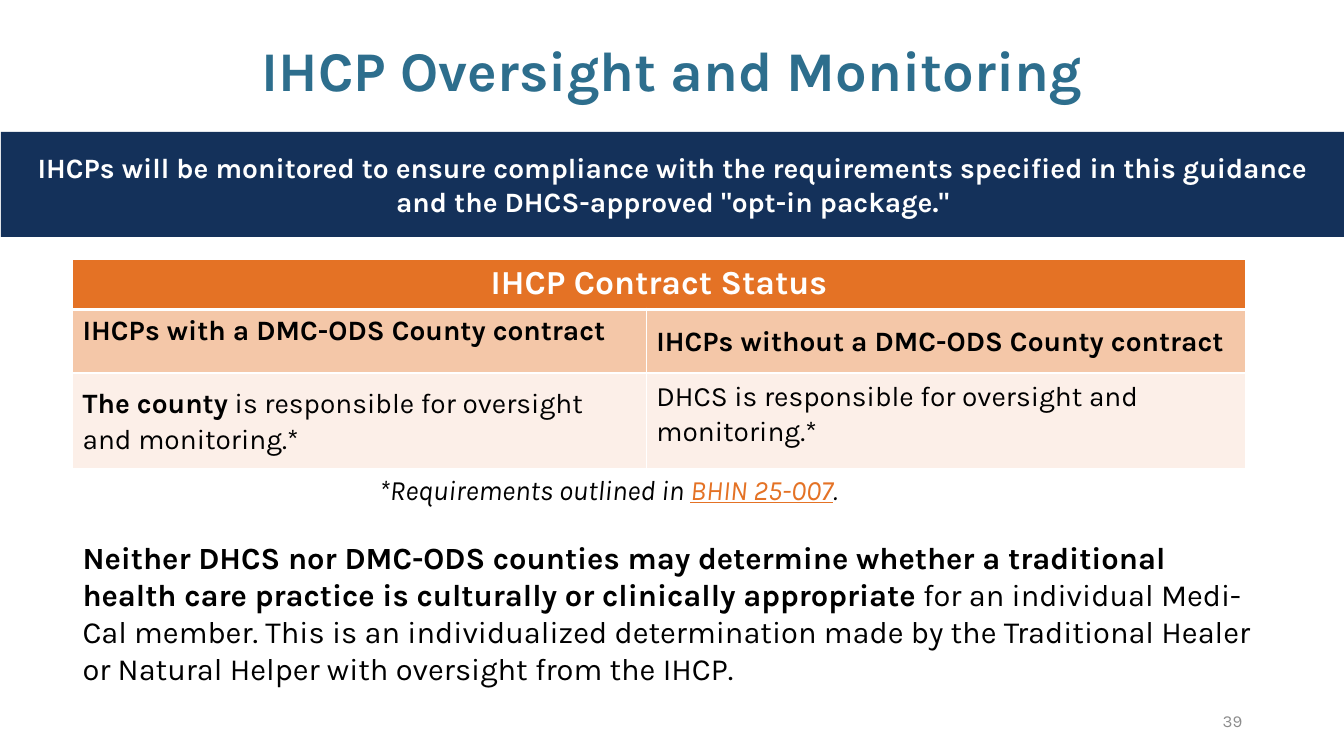
"""Build the slide on IHCP oversight and monitoring."""
import lxml.etree
import pptx
import pptx.dml.color
import pptx.enum.shapes
import pptx.enum.text
import pptx.oxml.ns
import pptx.util

Inches = pptx.util.Inches
Pt = pptx.util.Pt
ALIGN = pptx.enum.text.PP_ALIGN
ANCHOR = pptx.enum.text.MSO_ANCHOR
qn = pptx.oxml.ns.qn


def color(code):
    return pptx.dml.color.RGBColor.from_string(code)


def write(frame, runs, size, code, bold=None, align=ALIGN.LEFT, anchor=ANCHOR.TOP):
    frame.word_wrap = True
    frame.vertical_anchor = anchor
    para = frame.paragraphs[0]
    para.alignment = align
    para.font.name = "Karla"
    para.font.size = Pt(size)
    para.font.color.rgb = color(code)
    para.font.bold = bold
    for text, heavy in runs:
        run = para.add_run()
        run.text = text
        if heavy is not None:
            run.font.bold = heavy
    return para


deck = pptx.Presentation()
deck.slide_width = Inches(13.33)
deck.slide_height = Inches(7.5)
slide = deck.slides.add_slide(deck.slide_layouts[6])
shapes = slide.shapes

title = shapes.add_textbox(Inches(0), Inches(0), Inches(13.33), Inches(1.45))
para = write(title.text_frame, [("IHCP Oversight and Monitoring", None)],
             40, "2D6E8D", True, ALIGN.CENTER, ANCHOR.MIDDLE)
para.line_spacing = 0.9

number = shapes.add_textbox(Inches(9.42), Inches(6.95), Inches(3), Inches(0.4))
write(number.text_frame, [("39", None)], 12, "8C8C8C",
      align=ALIGN.RIGHT, anchor=ANCHOR.MIDDLE)

body = shapes.add_textbox(Inches(0.72), Inches(5.3), Inches(11.85), Inches(1.84))
para = write(body.text_frame, [
    ("Neither DHCS nor DMC-ODS counties may determine whether a traditional "
     "health care practice is culturally or clinically appropriate", True),
    (" for an individual Medi-Cal member. This is an individualized determination "
     "made by the Traditional Healer or Natural Helper with oversight from the IHCP.", False),
], 22, "000000")
para.space_after = Pt(10)

table = shapes.add_table(3, 2, Inches(0.72), Inches(2.57), Inches(11.63), Inches(2.06)).table
table.horz_banding = False
for col, width in zip(table.columns, (5.69, 5.94)):
    col.width = Inches(width)
for row, height in zip(table.rows, (0.48, 0.63, 0.95)):
    row.height = Inches(height)
table.cell(0, 0).merge(table.cell(0, 1))

write(table.cell(0, 0).text_frame, [("IHCP Contract Status", None)],
      24, "FFFFFF", True, ALIGN.CENTER)
entries = [
    (1, 0, [("IHCPs with a DMC-ODS County contract", True)], ANCHOR.TOP, 1, 0),
    (1, 1, [("IHCPs without a DMC-ODS County contract", True)], ANCHOR.MIDDLE, 1.07, 8),
    (2, 0, [("The county", True), (" is responsible for oversight and monitoring.*", False)],
     ANCHOR.MIDDLE, 1.08, 6),
    (2, 1, [("DHCS is responsible for oversight and monitoring.*", False)], ANCHOR.TOP, 1.07, 8),
]
for row, col, runs, anchor, lines, after in entries:
    cell = table.cell(row, col)
    para = write(cell.text_frame, runs, 20, "000000")
    cell.vertical_anchor = anchor
    para.line_spacing = lines
    para.space_after = Pt(after)

for row, fill in enumerate(("E47225", "F4C7A8", "FCEFE8")):
    for col in range(2):
        cell = table.cell(row, col)
        cell.fill.solid()
        cell.fill.fore_color.rgb = color(fill)
        props = cell._tc.get_or_add_tcPr()
        for spot, side in enumerate(("lnL", "lnR", "lnT", "lnB")):
            thick = (row, side) in ((0, "lnB"), (1, "lnT"))
            line = lxml.etree.Element(qn("a:" + side), w=str(Pt(3 if thick else 1)))
            paint = lxml.etree.SubElement(line, qn("a:solidFill"))
            lxml.etree.SubElement(paint, qn("a:srgbClr"), val="FFFFFF")
            props.insert(spot, line)

banner = shapes.add_shape(pptx.enum.shapes.MSO_SHAPE.RECTANGLE,
                          Inches(0.01), Inches(1.31), Inches(13.33), Inches(1.04))
banner.shadow.inherit = False
banner.fill.solid()
banner.fill.fore_color.rgb = color("14315A")
banner.line.fill.background()
write(banner.text_frame, [
    ("IHCPs will be monitored to ensure compliance with the requirements specified "
     'in this guidance and the DHCS-approved "opt-in package."', None),
], 20, "FFFFFF", True, ALIGN.CENTER, ANCHOR.MIDDLE)

note = shapes.add_textbox(Inches(3.34), Inches(4.64), Inches(5.39), Inches(0.44))
para = write(note.text_frame, [
    ("*Requirements outlined in ", None), ("BHIN 25-007", None), (".", None),
], 20, "000000", align=ALIGN.CENTER)
para.font.italic = True
source = para.runs[1]
source.font.color.rgb = color("E47225")
source.font.underline = True

deck.save("out.pptx")
